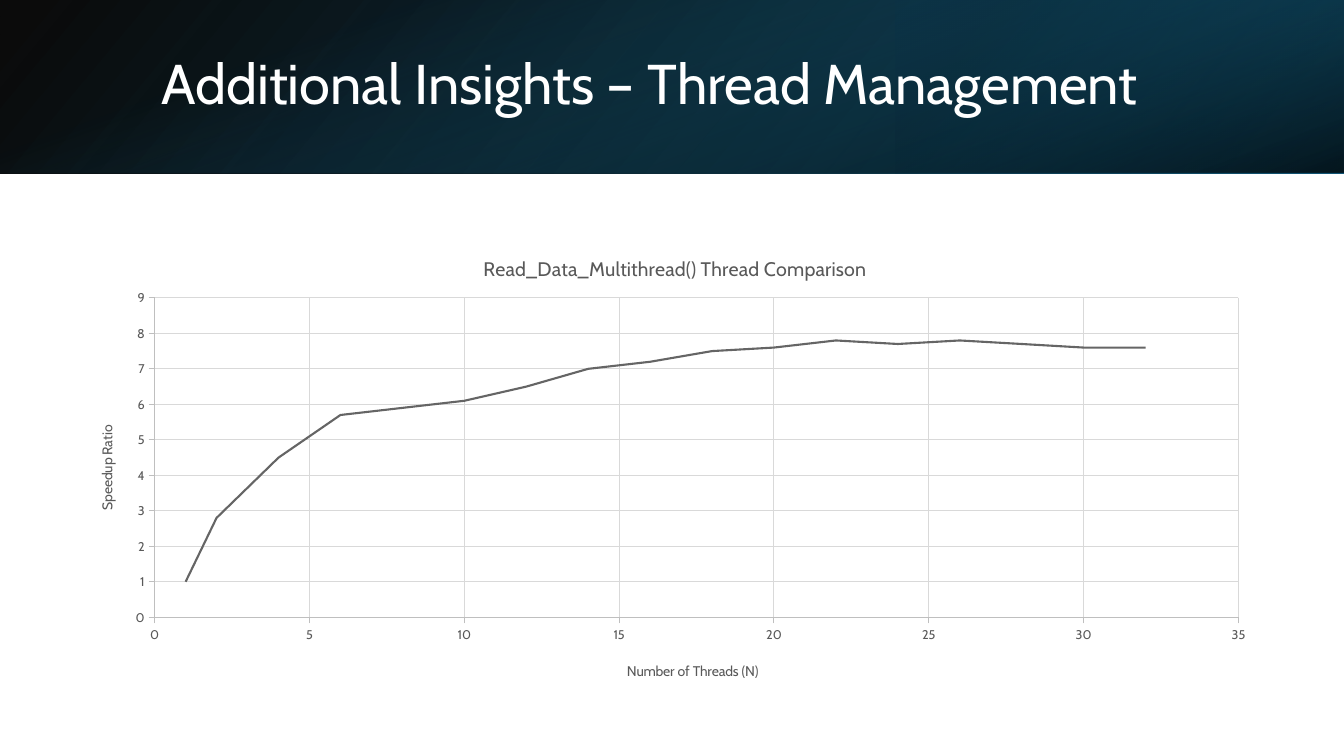
"""Build the thread management slide with its banner and speedup chart."""
from dataclasses import dataclass

from lxml import etree
from pptx import Presentation
from pptx import util as u
from pptx.chart.data import XyChartData
from pptx.dml.color import RGBColor
from pptx.enum import chart as charts, shapes, text
from pptx.oxml import parse_xml
from pptx.oxml.ns import nsdecls, qn

PX = 9525
FONT = "Cabin"
GREY = "595959"
THREADS = [1, *range(2, 33, 2)]
SPEEDUPS = [1, 2.8, 4.5, 5.7, 5.9, 6.1, 6.5, 7, 7.2, 7.5, 7.6, 7.8, 7.7, 7.8, 7.7, 7.6, 7.6]


@dataclass
class Stop:
    position: int
    color: str
    opacity: int


@dataclass
class Band:
    box: tuple[int, int, int, int]
    rotation: int
    flipped: bool
    angle: int
    stops: tuple[Stop, Stop]


@dataclass
class AxisStyle:
    title: str
    maximum: int
    step: int
    title_at: tuple[float, float]


BANDS = [
    Band((0, 0, 1280, 165), 0, True, 140, (Stop(0, "000000", 96), Stop(100, "104862", 100))),
    Band((853, 0, 427, 165), 180, True, 320, (Stop(19, "0B3041", 68), Stop(100, "156082", 79))),
    Band((557, -558, 165, 1280), 90, False, 340, (Stop(23, "156082", 0), Stop(99, "000000", 74))),
]
X_AXIS = AxisStyle("Number of Threads (N)", 35, 5, (0.46, 0.92))
Y_AXIS = AxisStyle("Speedup Ratio", 9, 1, (0.02, 0.41))


def px(*lengths: int) -> list[int]:
    return [u.Emu(length * PX) for length in lengths]


def rgb(color: str) -> RGBColor:
    return RGBColor.from_string(color)


def style_font(font, size: float, color: str) -> None:
    font.name = FONT
    font.size = u.Pt(size)
    font.bold = False
    font.color.rgb = rgb(color)


def style_line(line, color: str, width: float) -> None:
    line.color.rgb = rgb(color)
    line.width = u.Pt(width)


def add_band(slide, band: Band) -> None:
    shape = slide.shapes.add_shape(shapes.MSO_SHAPE.RECTANGLE, *px(*band.box))
    shape.shadow.inherit = False
    shape.line.fill.background()
    shape.rotation = band.rotation
    properties = shape._element.spPr
    if band.flipped:
        properties.find(qn("a:xfrm")).set("flipH", "1")
    stops = "".join(
        f'<a:gs pos="{stop.position * 1000}"><a:srgbClr val="{stop.color}">'
        f'<a:alpha val="{stop.opacity * 1000}"/></a:srgbClr></a:gs>'
        for stop in band.stops
    )
    gradient = parse_xml(
        f'<a:gradFill {nsdecls("a")} rotWithShape="1"><a:gsLst>{stops}</a:gsLst>'
        f'<a:lin ang="{band.angle * 60000}" scaled="0"/></a:gradFill>'
    )
    properties.find(qn("a:prstGeom")).addnext(gradient)


def add_title(slide, wording: str) -> None:
    title = slide.shapes.title
    title.left, title.top, title.width, title.height = px(144, 36, 1054, 92)
    frame = title.text_frame
    frame.text = wording
    frame.word_wrap = True
    frame.auto_size = text.MSO_AUTO_SIZE.NONE
    frame.vertical_anchor = text.MSO_ANCHOR.MIDDLE
    paragraph = frame.paragraphs[0]
    paragraph.alignment = text.PP_ALIGN.LEFT
    paragraph.line_spacing = 0.9
    style_font(paragraph.runs[0].font, 40, "FFFFFF")
    slide.shapes._spTree.append(title._element)


def place(element, index: int, settings: dict[str, str | float]) -> None:
    for old in element.findall(qn("c:layout")):
        element.remove(old)
    layout = etree.Element(qn("c:layout"))
    manual = etree.SubElement(layout, qn("c:manualLayout"))
    for name, value in settings.items():
        etree.SubElement(manual, qn(f"c:{name}")).set("val", str(value))
    element.insert(index, layout)


def style_chart_title(title, wording: str, size: int, position: tuple[float, float]) -> None:
    title.text_frame.text = wording
    style_font(title.text_frame.paragraphs[0].runs[0].font, size, GREY)
    x, y = position
    place(title._element, 1, {"xMode": "edge", "yMode": "edge", "x": x, "y": y})


def style_axis(axis, style: AxisStyle) -> None:
    axis.minimum_scale = 0
    axis.maximum_scale = style.maximum
    axis.major_unit = style.step
    axis.major_tick_mark = charts.XL_TICK_MARK.OUTSIDE
    axis.minor_tick_mark = charts.XL_TICK_MARK.NONE
    axis.has_major_gridlines = True
    style_line(axis.major_gridlines.format.line, "D9D9D9", 0.75)
    style_line(axis.format.line, "BFBFBF", 0.75)
    style_font(axis.tick_labels.font, 9, GREY)
    axis.has_title = True
    style_chart_title(axis.axis_title, style.title, 10, style.title_at)


def add_speedup_chart(slide) -> None:
    data = XyChartData()
    points = data.add_series("Series 1")
    for threads, speedup in zip(THREADS, SPEEDUPS):
        points.add_data_point(threads, speedup)
    kind = charts.XL_CHART_TYPE.XY_SCATTER_LINES_NO_MARKERS
    chart = slide.shapes.add_chart(kind, *px(67, 222, 1147, 441), data).chart
    style_font(chart.font, 10, "000000")
    chart.has_legend = False
    chart.has_title = True
    style_chart_title(chart.chart_title, "Read_Data_Multithread() Thread Comparison", 14, (0.34, 0.04))
    style_axis(chart.category_axis, X_AXIS)
    style_axis(chart.value_axis, Y_AXIS)
    plot = chart.plots[0]
    plot.vary_by_categories = False
    series = plot.series[0]
    series.smooth = False
    series.marker.style = charts.XL_MARKER_STYLE.NONE
    style_line(series.format.line, "656565", 1.5)
    area = chart._chartSpace.find(f".//{qn('c:plotArea')}")
    place(area, 0, {"layoutTarget": "inner", "xMode": "edge", "yMode": "edge",
                    "x": 0.07, "y": 0.14, "w": 0.9, "h": 0.69})


def main() -> None:
    presentation = Presentation()
    presentation.slide_width, presentation.slide_height = px(1280, 720)
    slide = presentation.slides.add_slide(presentation.slide_layouts[5])
    slide.background.fill.solid()
    slide.background.fill.fore_color.rgb = rgb("FFFFFF")
    for band in BANDS:
        add_band(slide, band)
    add_title(slide, "Additional Insights – Thread Management")
    add_speedup_chart(slide)
    presentation.save("out.pptx")


if __name__ == "__main__":
    main()
